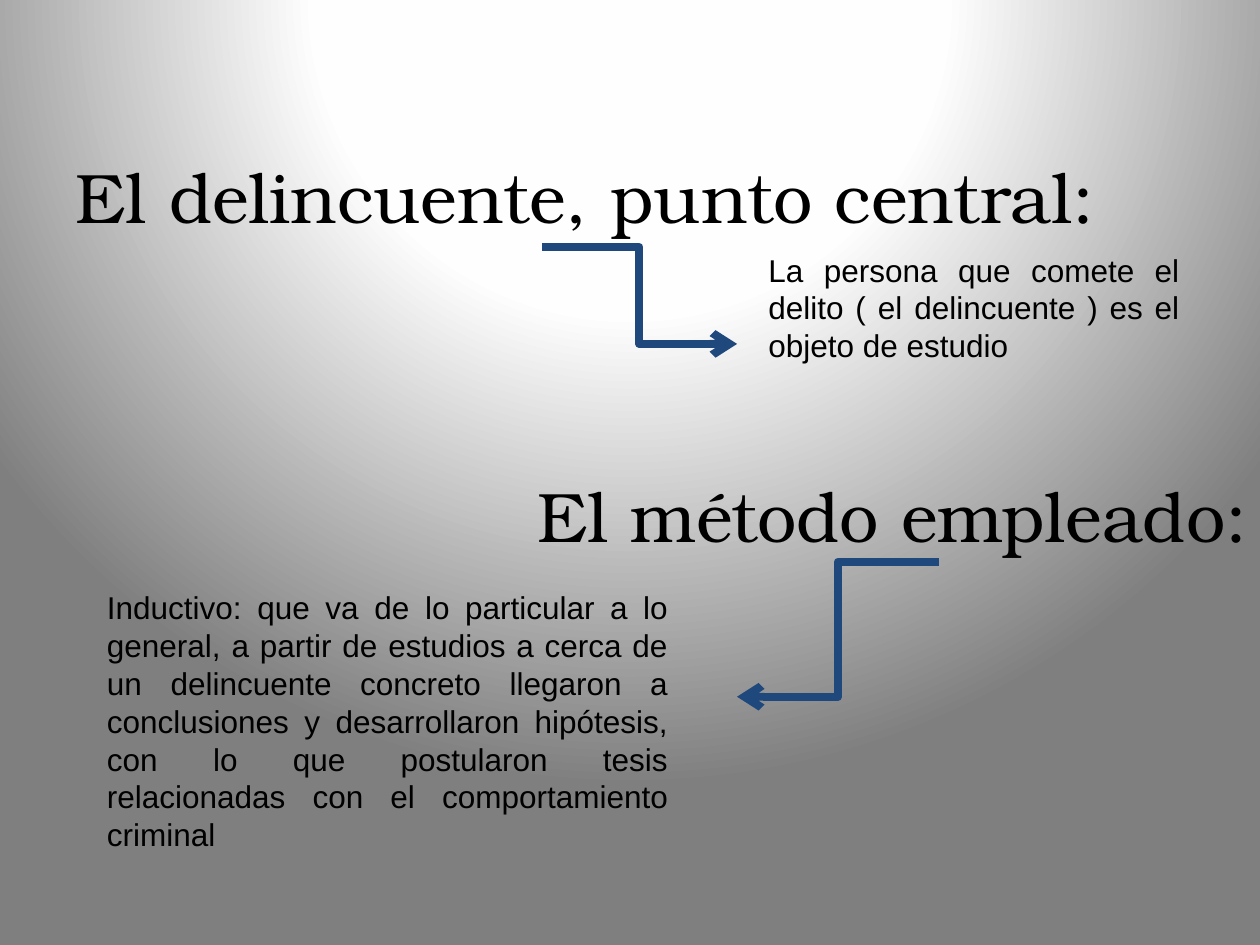
from lxml import etree
from pptx import Presentation
from pptx.dml.color import RGBColor
from pptx.enum.shapes import MSO_CONNECTOR
from pptx.enum.text import PP_ALIGN
from pptx.oxml import parse_xml
from pptx.oxml.ns import nsdecls, qn
from pptx.util import Inches, Pt

ELBOW = MSO_CONNECTOR.ELBOW
CENTER, RIGHT, JUSTIFY = PP_ALIGN.CENTER, PP_ALIGN.RIGHT, PP_ALIGN.JUSTIFY
BLACK = RGBColor(0, 0, 0)
BLUE = RGBColor(0x1F, 0x49, 0x7D)
STOPS = [(0, RGBColor(255, 255, 255)), (40, RGBColor(254, 254, 254)),
         (100, RGBColor(127, 127, 127))]
FOCUS = {"l": 50, "t": -80, "r": 50, "b": 180}

TITLE = ("TeX Gyre Bonum", 40)
BODY = ("Arial", 18)

TEXTS = [
    ("La persona que comete el delito ( el delincuente ) es el objeto de estudio",
     (6, 1.94, 3.46, 1.62), BODY, JUSTIFY),
    ("El delincuente, punto central:", (-0.12, 1.17, 9.53, 1.45), TITLE, CENTER),
    ("El método empleado:", (0.47, 3.7, 9.53, 1.45), TITLE, RIGHT),
    ("Inductivo: que va de lo particular a lo general, a partir de estudios "
     "a cerca de un delincuente concreto llegaron a conclusiones y "
     "desarrollaron hipótesis, con lo que postularon tesis relacionadas "
     "con el comportamiento criminal",
     (0.75, 4.62, 4.65, 2.22), BODY, JUSTIFY),
]
ARROWS = [(4.3, 1.96, 5.85, 2.73), (7.45, 4.46, 5.85, 5.53)]


def paint_back(slide):
    fill = slide.background.fill
    fill.solid()
    stops = "".join(
        f'<a:gs pos="{pos * 1000}"><a:srgbClr val="{color}"/></a:gs>'
        for pos, color in STOPS)
    sides = " ".join(f'{side}="{value * 1000}"' for side, value in FOCUS.items())
    grad = parse_xml(
        f'<a:gradFill {nsdecls("a")} rotWithShape="1"><a:gsLst>{stops}</a:gsLst>'
        f'<a:path path="circle"><a:fillToRect {sides}/></a:path></a:gradFill>')
    solid = next(slide.element.iter(qn("a:solidFill")))
    solid.getparent().replace(solid, grad)


def add_text(slide, text, box, style, align):
    frame = slide.shapes.add_textbox(*map(Inches, box)).text_frame
    frame.word_wrap = True
    para = frame.paragraphs[0]
    para.text = text
    para.alignment = align
    para.font.name, size = style
    para.font.size = Pt(size)
    para.font.color.rgb = BLACK


def add_arrow(slide, ends):
    arrow = slide.shapes.add_connector(ELBOW, *map(Inches, ends))
    arrow.line.color.rgb = BLUE
    arrow.line.width = Pt(4.5)
    props = arrow.element.spPr
    etree.SubElement(props.find(qn("a:ln")), qn("a:tailEnd"), type="arrow")
    etree.SubElement(props, qn("a:effectLst"))


def main():
    deck = Presentation()
    deck.slide_width, deck.slide_height = Inches(10), Inches(7.5)
    slide = deck.slides.add_slide(deck.slide_layouts[6])
    paint_back(slide)
    for item in TEXTS:
        add_text(slide, *item)
    for ends in ARROWS:
        add_arrow(slide, ends)
    deck.save("out.pptx")


if __name__ == "__main__":
    main()
